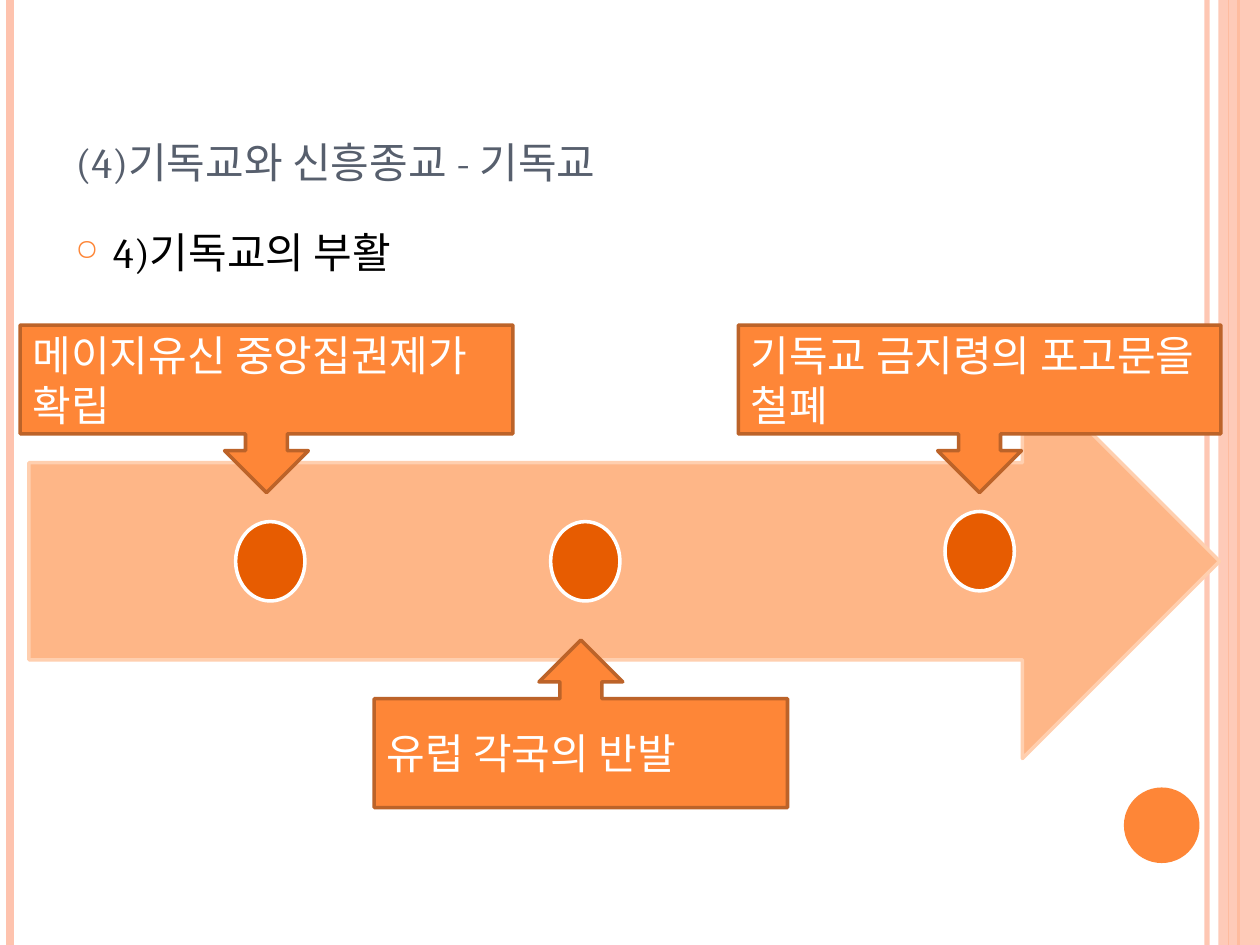
"""Build a timeline slide on the revival of Christianity."""
from lxml import etree
from pptx import Presentation
from pptx.dml.color import RGBColor
from pptx.enum.shapes import MSO_CONNECTOR, MSO_SHAPE
from pptx.enum.text import MSO_ANCHOR, PP_ALIGN
from pptx.oxml.ns import qn
from pptx.util import Inches, Pt

STRAIGHT = MSO_CONNECTOR.STRAIGHT
RECTANGLE, OVAL = MSO_SHAPE.RECTANGLE, MSO_SHAPE.OVAL
RIGHT_ARROW = MSO_SHAPE.RIGHT_ARROW
DOWN_CALLOUT, UP_CALLOUT = MSO_SHAPE.DOWN_ARROW_CALLOUT, MSO_SHAPE.UP_ARROW_CALLOUT
TOP, MIDDLE, BOTTOM = MSO_ANCHOR.TOP, MSO_ANCHOR.MIDDLE, MSO_ANCHOR.BOTTOM
LEFT = PP_ALIGN.LEFT
ORANGE, PEACH, WHITE = "FE8637", "FEC3AE", "FFFFFF"


def paint(color_format, color, opacity=100):
    color_format.rgb = RGBColor.from_string(color)
    if opacity < 100:
        for element in color_format._xFill.iter(qn("a:srgbClr")):
            etree.SubElement(element, qn("a:alpha"), val=str(opacity * 1000))


def write(shape, text, size=24, color=WHITE, anchor=MIDDLE):
    frame = shape.text_frame
    frame.word_wrap = True
    frame.vertical_anchor = anchor
    paragraph = frame.paragraphs[0]
    paragraph.alignment = LEFT
    run = paragraph.add_run()
    run.text = text
    run.font.name = "Cambria"
    run.font.size = Pt(size)
    paint(run.font.color, color)
    return paragraph


presentation = Presentation()
presentation.slide_width, presentation.slide_height = Inches(10), Inches(7.5)
slide = presentation.slides.add_slide(presentation.slide_layouts[5])
shapes = slide.shapes

title = shapes.title
title.left, title.top = Inches(0.5), Inches(0.3)
title.width, title.height = Inches(8.17), Inches(1.25)
heading = write(title, "(4)기독교와 신흥종교 - 기독교", size=30, color="575F6D", anchor=BOTTOM)
heading.runs[0].font._element.set("cap", "small")

body = shapes.add_textbox(Inches(0.5), Inches(1.75), Inches(8.17), Inches(0.7))
item = write(body, "4)기독교의 부활", color="000000", anchor=TOP)
item.space_before = Pt(6)
properties = item._p.get_or_add_pPr()
properties.set("marL", str(Inches(0.3)))
properties.set("indent", str(-Inches(0.3)))
bullet_color = etree.SubElement(properties, qn("a:buClr"))
etree.SubElement(bullet_color, qn("a:srgbClr"), val=ORANGE)
etree.SubElement(properties, qn("a:buSzPct"), val="70000")
etree.SubElement(properties, qn("a:buChar"), char="○")

border_lines = [
    (9.58, PEACH, 3, 93),
    (0.08, PEACH, 4.5, 100),
    (9.83, ORANGE, 1.5, 100),
    (9.75, ORANGE, 0.75, 100),
]
for x, color, width, opacity in border_lines:
    border = shapes.add_connector(STRAIGHT, Inches(x), 0, Inches(x), Inches(7.5))
    border.line.width = Pt(width)
    paint(border.line.color, color, opacity)
    etree.SubElement(border._element.spPr, qn("a:effectLst"))

timeline_shapes = [
    (RECTANGLE, 9.67, 0, 0.33, 7.5, PEACH, 87, None, None),
    (OVAL, 8.92, 6.25, 0.6, 0.6, ORANGE, 100, None, None),
    (RIGHT_ARROW, 0.23, 2.89, 9.45, 3.13, "FEB687", 100, "FFCFAF", None),
]
for left, top in [(4.37, 4.14), (1.87, 4.14), (7.5, 4.06)]:
    timeline_shapes.append((OVAL, left, top, 0.55, 0.63, "E75C01", 100, WHITE, None))

callouts = [
    (DOWN_CALLOUT, 0.16, 2.58, 3.91, "메이지유신 중앙집권제가 확립"),
    (UP_CALLOUT, 2.97, 5.08, 3.28, "유럽 각국의 반발"),
    (DOWN_CALLOUT, 5.86, 2.58, 3.83, "기독교 금지령의 포고문을 철폐"),
]
for kind, left, top, width, text in callouts:
    timeline_shapes.append((kind, left, top, width, 1.33, ORANGE, 100, "BC6329", text))

for kind, left, top, width, height, fill, opacity, outline, text in timeline_shapes:
    shape = shapes.add_shape(kind, Inches(left), Inches(top), Inches(width), Inches(height))
    shape.shadow.inherit = False
    shape.fill.solid()
    paint(shape.fill.fore_color, fill, opacity)
    if outline:
        shape.line.width = Pt(2)
        paint(shape.line.color, outline)
    else:
        shape.line.fill.background()
    if text:
        write(shape, text)

presentation.save("out.pptx")
